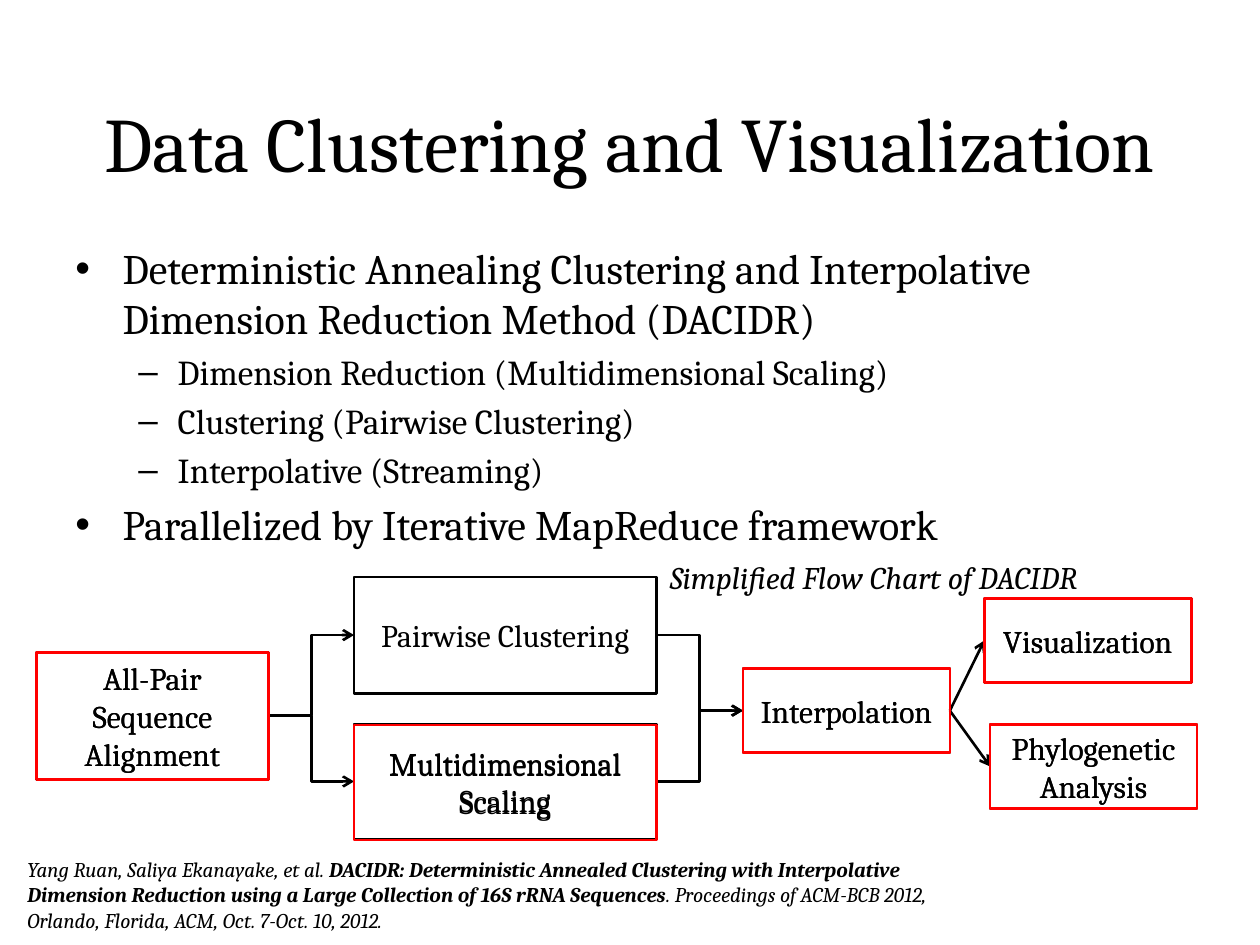
"""Build the slide on data clustering and visualization with its flow chart."""
from lxml.etree import SubElement
from pptx import Presentation
from pptx.dml.color import RGBColor
from pptx.enum.shapes import MSO_CONNECTOR, MSO_SHAPE
from pptx.enum.text import MSO_ANCHOR, MSO_AUTO_SIZE, PP_ALIGN
from pptx.oxml.ns import qn
from pptx.util import Pt

BLACK = RGBColor(0x00, 0x00, 0x00)
RED = RGBColor(0xFF, 0x00, 0x00)
FONT = "Cambria"
LINE_WIDTH = 1.5
LEFT_SIDE, RIGHT_SIDE = 1, 3

TITLE = "Data Clustering and Visualization"
POINTS = [
    (0, "Deterministic Annealing Clustering and Interpolative Dimension Reduction Method (DACIDR)"),
    (1, "Dimension Reduction (Multidimensional Scaling)"),
    (1, "Clustering (Pairwise Clustering)"),
    (1, "Interpolative (Streaming)"),
    (0, "Parallelized by Iterative MapReduce framework"),
]
LEVELS = [
    {"size": 24, "bullet": "•", "margin": 27, "hanging": 27},
    {"size": 20, "bullet": "–", "margin": 58.5, "hanging": 22.5},
]
CAPTION = "Simplified Flow Chart of DACIDR"
CITATION = [
    ("Yang Ruan, Saliya Ekanayake, et al. ", False),
    ("DACIDR: Deterministic Annealed Clustering with Interpolative Dimension Reduction "
     "using a Large Collection of 16S rRNA Sequences", True),
    (". Proceedings of ACM-BCB 2012, Orlando, Florida, ACM, Oct. 7-Oct. 10, 2012.", False),
]
STEPS = {
    "All-Pair Sequence Alignment": (20.9, 372.7, 132.5, 72.7),
    "Interpolation": (424.6, 382.1, 118.2, 48),
    "Pairwise Clustering": (202.3, 329.7, 172.8, 66.5),
    "Multidimensional Scaling": (202.3, 413.7, 172.8, 65.7),
    "Visualization": (562.5, 342, 118.2, 48),
    "Phylogenetic Analysis": (565.8, 414, 118.2, 48),
}
HIGHLIGHT_DROP = {"Multidimensional Scaling": 0.7}
UNMARKED = {"Pairwise Clustering"}
FLOWS = [
    ("All-Pair Sequence Alignment", "Pairwise Clustering", MSO_CONNECTOR.ELBOW),
    ("All-Pair Sequence Alignment", "Multidimensional Scaling", MSO_CONNECTOR.ELBOW),
    ("Pairwise Clustering", "Interpolation", MSO_CONNECTOR.ELBOW),
    ("Multidimensional Scaling", "Interpolation", MSO_CONNECTOR.ELBOW),
    ("Interpolation", "Visualization", MSO_CONNECTOR.STRAIGHT),
    ("Interpolation", "Phylogenetic Analysis", MSO_CONNECTOR.STRAIGHT),
]


def write(paragraph, text, size=18, bold=False, italic=False, align=PP_ALIGN.LEFT):
    paragraph.alignment = align
    run = paragraph.add_run()
    run.text = text
    run.font.name = FONT
    run.font.size = Pt(size)
    run.font.bold = bold
    run.font.italic = italic
    run.font.color.rgb = BLACK


def add_frame(slide, place, wrap=True, anchor=MSO_ANCHOR.TOP, fit=MSO_AUTO_SIZE.NONE):
    frame = slide.shapes.add_textbox(*map(Pt, place)).text_frame
    frame.word_wrap = wrap
    frame.vertical_anchor = anchor
    frame.auto_size = fit
    return frame


def add_points(frame):
    for index, (level, text) in enumerate(POINTS):
        style = LEVELS[level]
        paragraph = frame.add_paragraph() if index else frame.paragraphs[0]
        paragraph.level = level
        properties = paragraph._p.get_or_add_pPr()
        properties.set("marL", str(Pt(style["margin"])))
        properties.set("indent", str(-Pt(style["hanging"])))
        SubElement(properties, qn("a:buFont")).set("typeface", "Arial")
        SubElement(properties, qn("a:buChar")).set("char", style["bullet"])
        paragraph.space_before = Pt(0.2 * style["size"] if index else 0)
        write(paragraph, text, size=style["size"])


def add_step(slide, name, color, drop=0):
    left, top, width, height = STEPS[name]
    step = slide.shapes.add_shape(
        MSO_SHAPE.FLOWCHART_PROCESS, Pt(left), Pt(top + drop), Pt(width), Pt(height))
    step.shadow.inherit = False
    step.fill.background()
    step.line.color.rgb = color
    step.line.width = Pt(LINE_WIDTH)
    step.text_frame.word_wrap = True
    step.text_frame.vertical_anchor = MSO_ANCHOR.MIDDLE
    write(step.text_frame.paragraphs[0], name, align=PP_ALIGN.CENTER)
    return step


def add_flow(slide, source, target, route):
    flow = slide.shapes.add_connector(
        route, source.left + source.width, source.top + source.height // 2,
        target.left, target.top + target.height // 2)
    flow.begin_connect(source, RIGHT_SIDE)
    flow.end_connect(target, LEFT_SIDE)
    flow.line.color.rgb = BLACK
    flow.line.width = Pt(LINE_WIDTH)
    SubElement(flow.line._get_or_add_ln(), qn("a:tailEnd")).set("type", "arrow")
    SubElement(flow._element.spPr, qn("a:effectLst"))


def main():
    deck = Presentation()
    deck.slide_width, deck.slide_height = Pt(720), Pt(540)
    slide = deck.slides.add_slide(deck.slide_layouts[6])

    title = add_frame(slide, (36, 36, 648, 90), anchor=MSO_ANCHOR.MIDDLE)
    write(title.paragraphs[0], TITLE, size=44, align=PP_ALIGN.CENTER)
    add_points(add_frame(slide, (36, 135, 648, 356.4)))

    steps = {name: add_step(slide, name, BLACK) for name in STEPS}
    for source, target, route in FLOWS:
        add_flow(slide, steps[source], steps[target], route)
    for name in STEPS:
        if name not in UNMARKED:
            add_step(slide, name, RED, drop=HIGHLIGHT_DROP.get(name, 0))

    caption = add_frame(slide, (375.8, 315.4, 260, 29), wrap=False,
                        fit=MSO_AUTO_SIZE.SHAPE_TO_FIT_TEXT)
    write(caption.paragraphs[0], CAPTION, italic=True)
    citation = add_frame(slide, (8.6, 486, 570.2, 51), fit=MSO_AUTO_SIZE.SHAPE_TO_FIT_TEXT)
    for text, bold in CITATION:
        write(citation.paragraphs[0], text, size=12, bold=bold, italic=True)

    deck.save("out.pptx")


if __name__ == "__main__":
    main()
